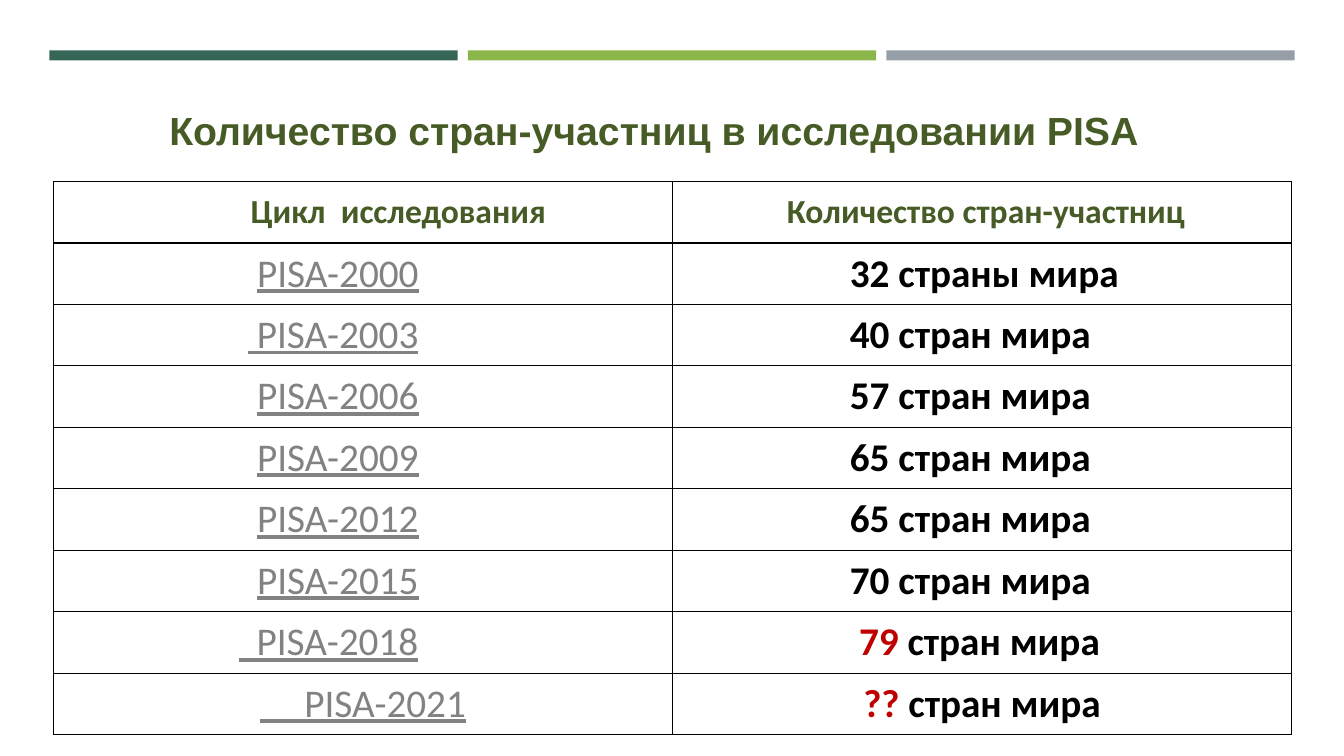
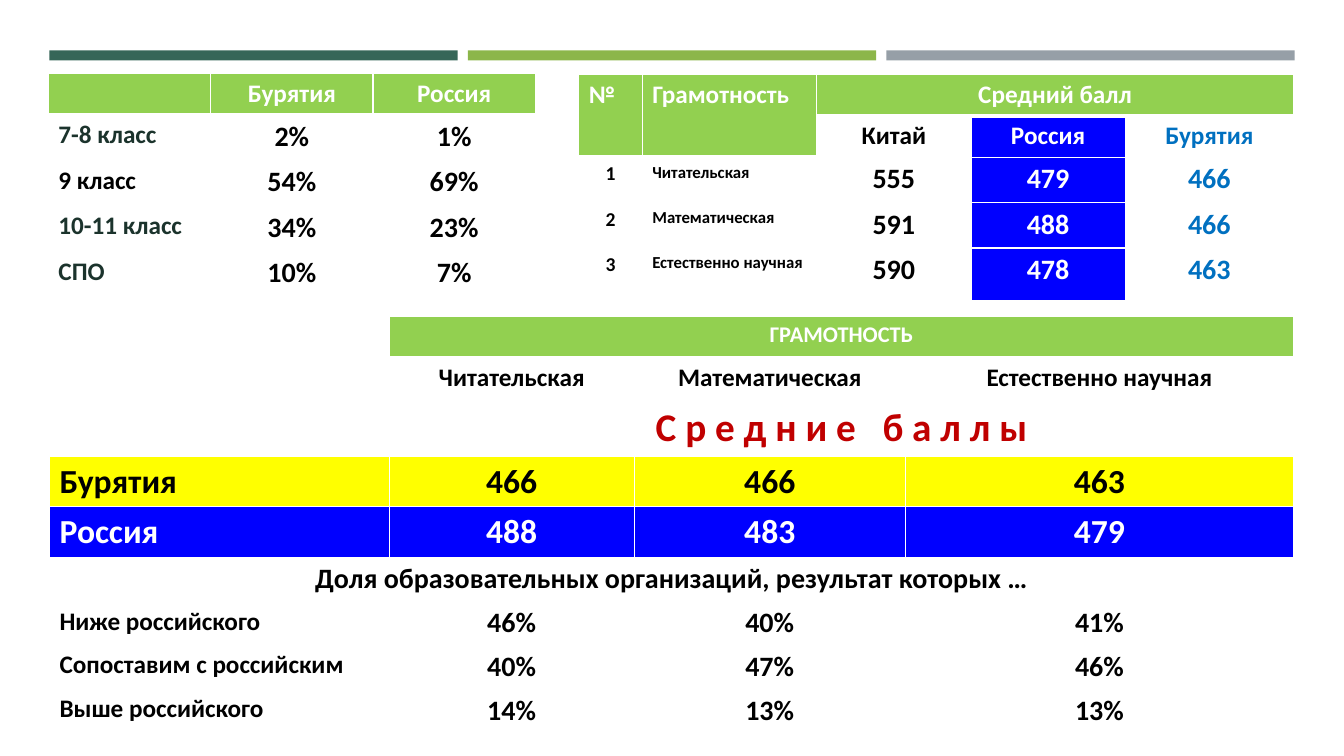
from dataclasses import dataclass, replace
from typing import Optional

from lxml.etree import SubElement
from pptx import Presentation
from pptx.dml.color import RGBColor
from pptx.enum.shapes import MSO_SHAPE as Shape
from pptx.enum.text import MSO_ANCHOR as Anchor, PP_ALIGN as Align
from pptx.oxml.ns import qn
from pptx.slide import Slide
from pptx.table import _Cell as TableCell
from pptx.util import Inches, Pt

COLORS = {
    "pine": "366658", "leaf": "8CB64A", "steel": "969FA7",
    "olive": "465B25", "gray": "828282", "red": "C00000",
    "black": "000000", "white": "FFFFFF", "lime": "92D050",
    "yellow": "FFFF00", "blue": "0000FF", "sky": "0070C0",
    "forest": "1B332C",
}
BODY_FONT = "Calibri"
TITLE_FONT = "Arial"
BAND_LEFT, BAND_TOP, BAND_WIDTH, BAND_STEP = 0.49, 0.5, 4.05, 4.15


@dataclass(frozen=True)
class Cell:
    """One table cell; lead is red text put before the rest, indent is in inches."""
    text: str = ""
    size: int = 18
    color: str = "black"
    fill: Optional[str] = "white"
    align: Align = Align.CENTER
    bold: bool = True
    underline: bool = False
    lead: str = ""
    indent: float = 0
    middle: bool = False
    rows: int = 1
    columns: int = 1


@dataclass(frozen=True)
class Grid:
    """A table: place and sizes in inches, border widths in points."""
    left: float
    top: float
    widths: list[float]
    heights: list[float]
    cells: list[list[Cell]]
    border: str = "white"
    header_rule: float = 3
    inset: tuple[float, float] = (0.1, 0.05)


def rgb(name: str) -> RGBColor:
    return RGBColor.from_string(COLORS[name])


def set_borders(cell: TableCell, color: str, top: float, bottom: float) -> None:
    properties = cell._tc.get_or_add_tcPr()
    sides = {"lnL": 1, "lnR": 1, "lnT": top, "lnB": bottom}
    for position, (side, width) in enumerate(sides.items()):
        line = SubElement(properties, qn(f"a:{side}"), w=str(Pt(width)))
        fill = SubElement(line, qn("a:solidFill"))
        SubElement(fill, qn("a:srgbClr"), val=COLORS[color])
        properties.insert(position, line)


def fill_cell(target: TableCell, cell: Cell, inset: tuple[float, float]) -> None:
    side, edge = inset
    target.margin_left, target.margin_right = Inches(side + cell.indent), Inches(side)
    target.margin_top = target.margin_bottom = Inches(edge)
    target.vertical_anchor = Anchor.MIDDLE if cell.middle else Anchor.TOP
    if cell.fill:
        target.fill.solid()
        target.fill.fore_color.rgb = rgb(cell.fill)
    else:
        target.fill.background()
    para = target.text_frame.paragraphs[0]
    para.alignment = cell.align
    font = para.font
    font.name, font.size = BODY_FONT, Pt(cell.size)
    font.bold, font.underline = cell.bold, cell.underline
    font.color.rgb = rgb(cell.color)
    if cell.lead:
        span = para.add_run()
        span.text = cell.lead
        span.font.color.rgb = rgb("red")
    if cell.text:
        para.add_run().text = cell.text


def draw_grid(page: Slide, grid: Grid) -> None:
    frame = page.shapes.add_table(
        len(grid.heights), len(grid.widths), Inches(grid.left), Inches(grid.top),
        Inches(sum(grid.widths)), Inches(sum(grid.heights)))
    table = frame.table
    table.first_row = table.horz_banding = False
    for column, width in zip(table.columns, grid.widths):
        column.width = Inches(width)
    for row, height in zip(table.rows, grid.heights):
        row.height = Inches(height)
    for row_number, row_cells in enumerate(grid.cells):
        top = grid.header_rule if row_number == 1 else 1
        bottom = grid.header_rule if row_number == 0 else 1
        for column_number, cell in enumerate(row_cells):
            target = table.cell(row_number, column_number)
            fill_cell(target, cell, grid.inset)
            set_borders(target, grid.border, top, bottom)
    for row_number, row_cells in enumerate(grid.cells):
        for column_number, cell in enumerate(row_cells):
            if cell.rows * cell.columns > 1:
                table.cell(row_number, column_number).merge(table.cell(
                    row_number + cell.rows - 1, column_number + cell.columns - 1))


def add_page(deck: Presentation) -> Slide:
    """Add a blank page with the three coloured bands."""
    page = deck.slides.add_slide(deck.slide_layouts[6])
    for number, color in enumerate(("pine", "leaf", "steel")):
        band = page.shapes.add_shape(
            Shape.RECTANGLE, Inches(BAND_LEFT + number * BAND_STEP),
            Inches(BAND_TOP), Inches(BAND_WIDTH), Inches(0.1))
        band.shadow.inherit = False
        band.fill.solid()
        band.fill.fore_color.rgb = rgb(color)
        band.line.fill.background()
    return page


def add_title(page: Slide, text: str) -> None:
    box = page.shapes.add_textbox(Inches(1.52), Inches(1), Inches(9.93), Inches(0.57))
    box.text_frame.vertical_anchor = Anchor.MIDDLE
    box.text_frame.word_wrap = False
    para = box.text_frame.paragraphs[0]
    para.text = text
    para.alignment = Align.CENTER
    para.font.name, para.font.size, para.font.bold = TITLE_FONT, Pt(28), True
    para.font.color.rgb = rgb("olive")


def spanning(cell: Cell, columns: int) -> list[Cell]:
    """A cell over several columns, with the empty cells it covers."""
    covered = replace(cell, text="")
    return [replace(cell, columns=columns)] + [covered] * (columns - 1)


def values(texts: str, **style) -> list[Cell]:
    return [Cell(text, **style) for text in texts.split()]


def label(text: str, **style) -> Cell:
    return Cell(text, align=Align.LEFT, **style)


def header(text: str = "", **style) -> Cell:
    return Cell(text, color="white", fill="lime", **style)


def countries_grid() -> Grid:
    heading = Cell(size=24, color="olive", fill=None, middle=True)
    cycle = Cell(size=28, color="gray", fill=None, align=Align.LEFT, bold=False,
                 underline=True, indent=1.94, middle=True)
    count = Cell(size=28, fill=None, align=Align.LEFT, indent=1.68, middle=True)
    rows = [[replace(heading, text="Цикл  исследования", indent=0.7),
             replace(heading, text="Количество стран-участниц", indent=0.08)]]
    for cycle_text, cycle_indent, count_text in (
            ("PISA-2000", 1.94, "32 страны мира"),
            (" PISA-2003", 1.85, "40 стран мира"),
            ("PISA-2006", 1.94, "57 стран мира"),
            ("PISA-2009", 1.94, "65 стран мира"),
            ("PISA-2012", 1.94, "65 стран мира"),
            ("PISA-2015", 1.94, "70 стран мира")):
        rows.append([replace(cycle, text=cycle_text, indent=cycle_indent),
                     replace(count, text=count_text)])
    rows.append([replace(cycle, text="  PISA-2018", indent=1.76),
                 replace(count, lead="79", text=" стран мира", indent=1.77)])
    rows.append([replace(cycle, text="     PISA-2021", align=Align.CENTER, indent=0),
                 replace(count, lead="??", text=" стран мира",
                         align=Align.CENTER, indent=0)])
    return Grid(0.53, 1.8, [6.14] * 2, [0.61] * 9, rows,
                border="black", header_rule=1, inset=(0.08, 0.04))


def literacy_grid() -> Grid:
    rows = [
        [Cell(), *spanning(header("ГРАМОТНОСТЬ", size=16), 3)],
        [Cell(), Cell("Читательская"), Cell("Математическая"),
         Cell("Естественно научная")],
        [Cell(), *spanning(Cell("С р е д н и е   б а л л ы", size=28, color="red"), 3)],
    ]
    for region, scores, color, fill in (
            ("Бурятия", "466 466 463", "black", "yellow"),
            ("Россия", "488 483 479", "white", "blue")):
        style = {"size": 24, "color": color, "fill": fill}
        rows.append([label(region, **style), *values(scores, **style)])
    rows.append(spanning(
        Cell("Доля образовательных организаций, результат которых …", size=20), 4))
    for result, shares in (("Ниже российского", "46% 40% 41%"),
                           ("Сопоставим с российским", "40% 47% 46%"),
                           ("Выше российского", "14% 13% 13%")):
        rows.append([label(result), *values(shares, size=20)])
    return Grid(0.49, 3.14, [3.37, 2.43, 2.69, 3.85], [0.41] * 9, rows)


def classes_grid() -> Grid:
    rows = [[header(text, middle=True) for text in ("", "Бурятия", "Россия")]]
    for group, color, shares in (("7-8 класс", "forest", "2% 1%"),
                                 ("9 класс", "black", "54% 69%"),
                                 ("10-11 класс", "forest", "34% 23%"),
                                 ("СПО", "forest", "10% 7%")):
        rows.append([label(group, color=color), *values(shares, size=20)])
    return Grid(0.48, 0.73, [1.61] * 3, [0.41] + [0.45] * 4, rows)


def scores_grid() -> Grid:
    regions = (("Китай", "black", "white"), ("Россия", "white", "blue"),
               ("Бурятия", "sky", "white"))
    rows = [
        [header("№", align=Align.LEFT, rows=2),
         header("Грамотность", align=Align.LEFT, rows=2),
         *spanning(header("Средний балл"), 3)],
        [header(), header(),
         *(Cell(name, color=color, fill=fill) for name, color, fill in regions)],
    ]
    for number, (subject, scores) in enumerate((
            ("Читательская", (555, 479, 466)),
            ("Математическая", (591, 488, 466)),
            ("Естественно научная", (590, 478, 463))), start=1):
        rows.append([Cell(str(number), size=14), label(subject, size=12)] + [
            Cell(str(score), size=20, color=color, fill=fill)
            for score, (_, color, fill) in zip(scores, regions)])
    return Grid(5.74, 0.74, [0.63, 1.73, 1.53, 1.53, 1.67],
                [0.41, 0.41, 0.45, 0.45, 0.52], rows)


def main() -> None:
    deck = Presentation()
    deck.slide_width, deck.slide_height = Inches(13.33), Inches(7.5)

    countries_page = add_page(deck)
    draw_grid(countries_page, countries_grid())
    add_title(countries_page, "Количество стран-участниц в исследовании PISA")

    results_page = add_page(deck)
    for grid in (literacy_grid(), classes_grid(), scores_grid()):
        draw_grid(results_page, grid)

    deck.save("out.pptx")


if __name__ == "__main__":
    main()
